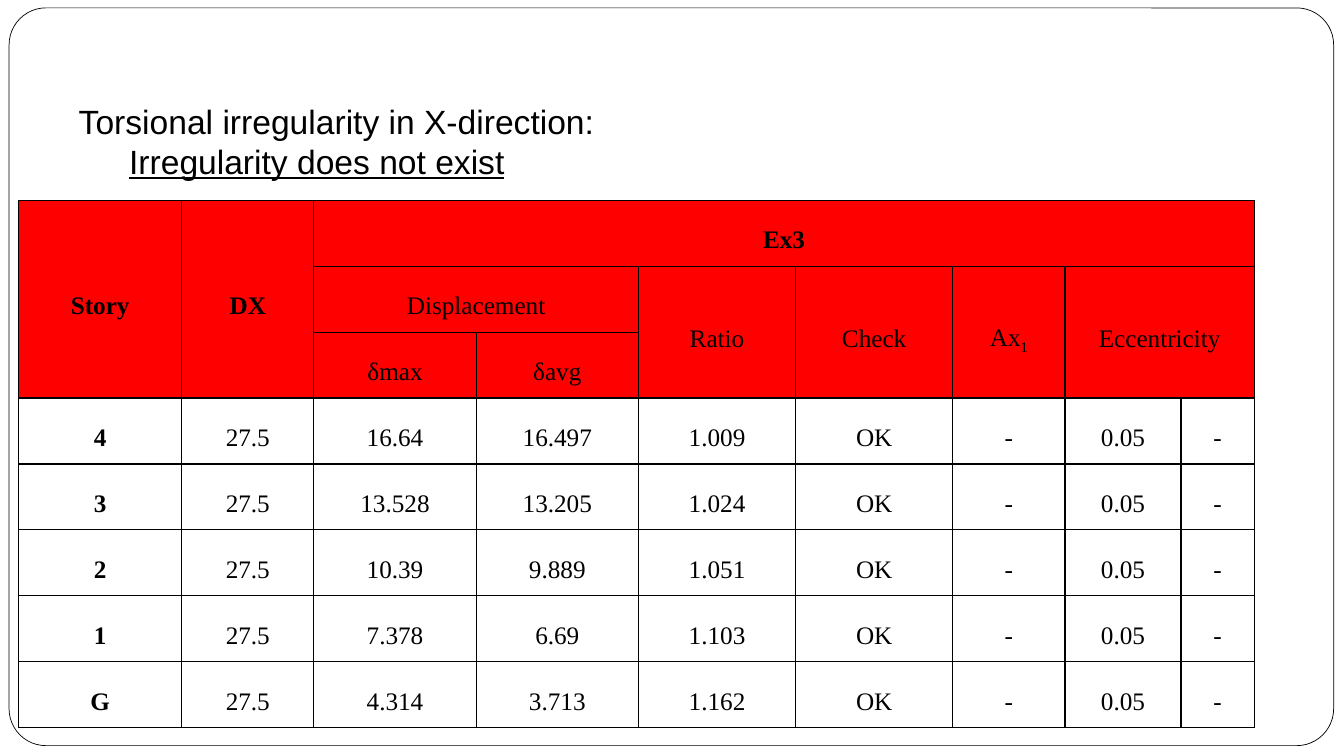
from dataclasses import dataclass

from lxml.etree import SubElement
from pptx import Presentation
from pptx.dml.color import RGBColor
from pptx.enum.shapes import MSO_SHAPE as Preset
from pptx.enum.text import MSO_ANCHOR as Anchor, MSO_AUTO_SIZE as AutoSize, PP_ALIGN as Align
from pptx.oxml.ns import qn
from pptx.slide import Slide
from pptx.table import Table, _Cell as Cell
from pptx.util import Cm, Pt

COLORS = {"ink": "000000", "paper": "FFFFFF", "header": "FF0000"}
HEADER_ROWS = 3
COLUMN_WIDTHS = (4.11, 3.33, 4.09, 4.09, 3.96, 3.96, 2.83, 2.92, 1.85)
ROW_HEIGHT = 1.66


@dataclass(frozen=True)
class Heading:
    text: str
    row: int
    column: int
    row_span: int = 1
    column_span: int = 1
    bold: bool = False
    subscript: str = ""


@dataclass(frozen=True)
class Story:
    label: str
    max_displacement: str
    avg_displacement: str
    ratio: str

    def values(self) -> tuple[str, ...]:
        return (self.label, "27.5", self.max_displacement, self.avg_displacement,
                self.ratio, "OK", "-", "0.05", "-")


@dataclass(frozen=True)
class TitleLine:
    text: str
    indent: float
    underline: bool = False


HEADINGS = (
    Heading("Story", 0, 0, row_span=3, bold=True),
    Heading("DX", 0, 1, row_span=3, bold=True),
    Heading("Ex3", 0, 2, column_span=7, bold=True),
    Heading("Displacement", 1, 2, column_span=2),
    Heading("Ratio", 1, 4, row_span=2),
    Heading("Check", 1, 5, row_span=2),
    Heading("Ax", 1, 6, row_span=2, subscript="1"),
    Heading("Eccentricity", 1, 7, row_span=2, column_span=2),
    Heading("δmax", 2, 2),
    Heading("δavg", 2, 3),
)

STORIES = (
    Story("4", "16.64", "16.497", "1.009"),
    Story("3", "13.528", "13.205", "1.024"),
    Story("2", "10.39", "9.889", "1.051"),
    Story("1", "7.378", "6.69", "1.103"),
    Story("G", "4.314", "3.713", "1.162"),
)

TITLE_LINES = (
    TitleLine("Torsional irregularity in X-direction:", 1.27),
    TitleLine("Irregularity does not exist", 2.54, underline=True),
)


def color(name: str) -> RGBColor:
    return RGBColor.from_string(COLORS[name])


def draw_frame(slide: Slide) -> None:
    frame = slide.shapes.add_shape(Preset.ROUNDED_RECTANGLE, Cm(0.23), Cm(0.2), Cm(33.38), Cm(18.59))
    frame.adjustments[0] = 0.05
    frame.shadow.inherit = False
    frame.fill.solid()
    frame.fill.fore_color.rgb = color("paper")
    frame.line.color.rgb = color("ink")
    frame.line.width = Pt(0.5)
    slide.shapes._spTree.insert(2, frame._element)


def write_title(slide: Slide) -> None:
    title = slide.shapes.title
    title.left, title.top, title.width, title.height = Cm(0.46), Cm(2.41), Cm(17.86), Cm(2.31)
    text_frame = title.text_frame
    text_frame.text = "\n".join(line.text for line in TITLE_LINES)
    text_frame.word_wrap = True
    text_frame.auto_size = AutoSize.NONE
    text_frame.vertical_anchor = Anchor.TOP
    for paragraph, line in zip(text_frame.paragraphs, TITLE_LINES):
        paragraph.alignment = Align.LEFT
        paragraph.line_spacing = 1.0
        properties = paragraph._p.get_or_add_pPr()
        properties.set("marL", str(Cm(line.indent)))
        properties.set("indent", "0")
        font = paragraph.runs[0].font
        font.name, font.size, font.underline = "Arial", Pt(24), line.underline
        font.color.rgb = color("ink")


def style_cell(cell: Cell, fill: str) -> None:
    cell.vertical_anchor = Anchor.MIDDLE
    cell.margin_left = cell.margin_right = Cm(0.18)
    cell.margin_top = cell.margin_bottom = Cm(0)
    cell.fill.solid()
    cell.fill.fore_color.rgb = color(fill)
    properties = cell._tc.get_or_add_tcPr()
    for position, side in enumerate(("lnL", "lnR", "lnT", "lnB")):
        border = SubElement(properties, qn(f"a:{side}"), w=str(Pt(1)))
        SubElement(SubElement(border, qn("a:solidFill")), qn("a:srgbClr"), val=COLORS["ink"])
        properties.insert(position, border)


def write_cell(cell: Cell, text: str, bold: bool, subscript: str = "") -> None:
    paragraph = cell.text_frame.paragraphs[0]
    paragraph.text = text
    paragraph.alignment = Align.CENTER
    paragraph.line_spacing = 1.5
    paragraph.space_after = Pt(6)
    if subscript:
        lowered = paragraph.add_run()
        lowered.text = subscript
        lowered._r.get_or_add_rPr().set("baseline", "-25000")
    for run in paragraph.runs:
        run.font.name, run.font.size, run.font.bold = "Times New Roman", Pt(18), bold
        run.font.color.rgb = color("ink")


def add_story_table(slide: Slide) -> Table:
    row_count = HEADER_ROWS + len(STORIES)
    table = slide.shapes.add_table(row_count, len(COLUMN_WIDTHS), Cm(0.47), Cm(5.05),
                                   Cm(sum(COLUMN_WIDTHS)), Cm(ROW_HEIGHT * row_count)).table
    table.first_row = table.horz_banding = False
    for column, width in zip(table.columns, COLUMN_WIDTHS):
        column.width = Cm(width)
    for index, row in enumerate(table.rows):
        row.height = Cm(ROW_HEIGHT)
        for cell in row.cells:
            style_cell(cell, "header" if index < HEADER_ROWS else "paper")
    return table


def fill_story_table(table: Table) -> None:
    for heading in HEADINGS:
        cell = table.cell(heading.row, heading.column)
        if heading.row_span > 1 or heading.column_span > 1:
            cell.merge(table.cell(heading.row + heading.row_span - 1,
                                  heading.column + heading.column_span - 1))
        write_cell(cell, heading.text, heading.bold, heading.subscript)
    for row, story in enumerate(STORIES, start=HEADER_ROWS):
        for column, value in enumerate(story.values()):
            write_cell(table.cell(row, column), value, bold=column == 0)


def main() -> None:
    presentation = Presentation()
    presentation.slide_width, presentation.slide_height = Cm(33.87), Cm(19.05)
    slide = presentation.slides.add_slide(presentation.slide_layouts[5])
    draw_frame(slide)
    write_title(slide)
    fill_story_table(add_story_table(slide))
    presentation.save("out.pptx")


if __name__ == "__main__":
    main()
